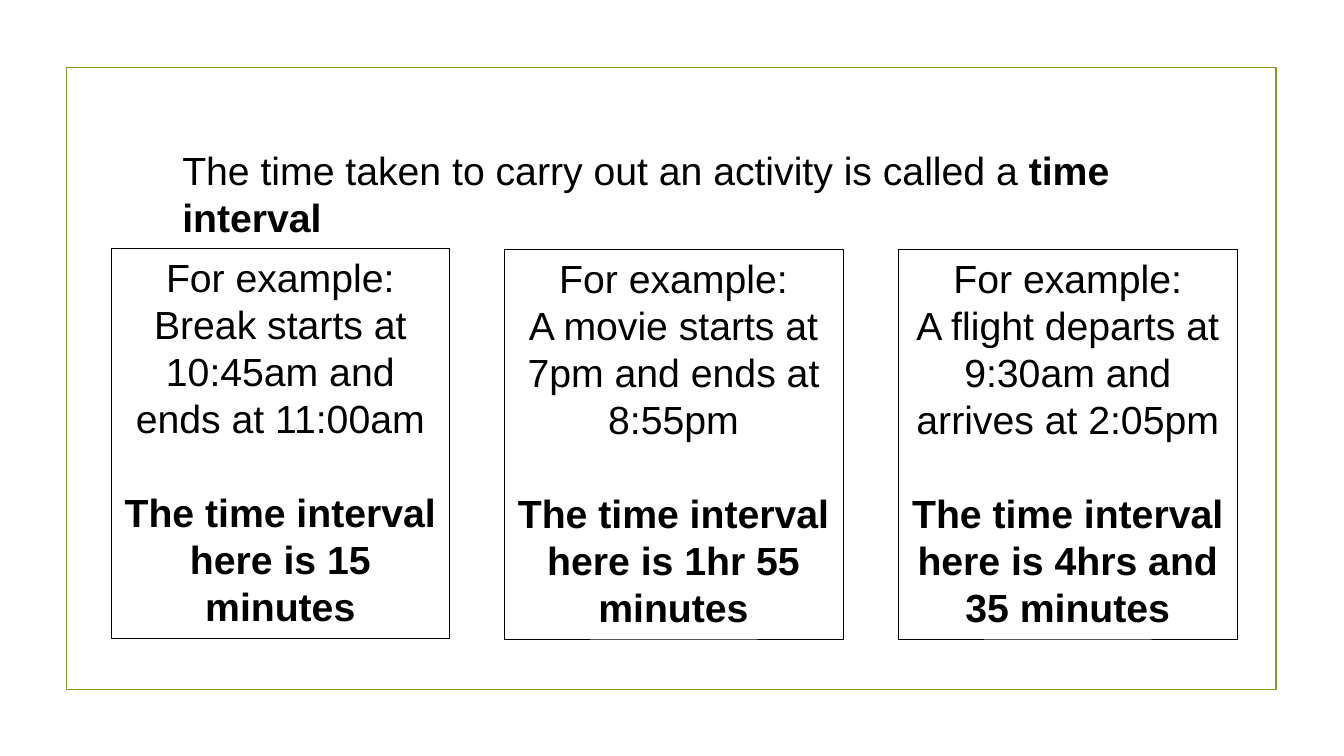
from dataclasses import dataclass

from pptx import Presentation
from pptx.dml.color import RGBColor
from pptx.enum.shapes import MSO_SHAPE as Shape
from pptx.enum.text import MSO_AUTO_SIZE as Fit, PP_ALIGN as Align
from pptx.util import Inches, Pt

BLACK = "000000"
GREEN = "83992A"
FONT = {"name": "Arial", "size": Pt(28)}
LINE_GAP = Pt(33.6)


@dataclass
class Card:
    left: float
    top: float
    event: str
    answer: str


CARDS = [
    Card(1.1, 2.46, "Break starts at 10:45am and ends at 11:00am",
         "The time interval here is 15 minutes"),
    Card(5, 2.47, "A movie starts at 7pm and ends at 8:55pm",
         "The time interval here is 1hr 55 minutes"),
    Card(8.91, 2.47, "A flight departs at 9:30am and arrives at 2:05pm",
         "The time interval here is 4hrs and 35 minutes"),
]


def color(code: str) -> RGBColor:
    return RGBColor.from_string(code)


def outline(shape, code: str, width: float) -> None:
    shape.line.color.rgb = color(code)
    shape.line.width = Pt(width)


def add_run(para, text: str, bold: bool = False) -> None:
    run = para.add_run()
    run.text = text
    for key, value in (FONT | {"bold": bold}).items():
        setattr(run.font, key, value)
    run.font.color.rgb = color(BLACK)


def add_box(slide, left: float, top: float, width: float, height: float):
    box = slide.shapes.add_textbox(*map(Inches, (left, top, width, height)))
    box.text_frame.word_wrap = True
    box.text_frame.auto_size = Fit.SHAPE_TO_FIT_TEXT
    return box


def add_frame(slide) -> None:
    frame = slide.shapes.add_shape(
        Shape.RECTANGLE, *map(Inches, (0.66, 0.67, 12, 6.17)))
    frame.shadow.inherit = False
    frame.fill.background()
    outline(frame, GREEN, 1.25)


def add_intro(slide) -> None:
    para = add_box(slide, 1.71, 1.4, 10.66, 0.57).text_frame.paragraphs[0]
    add_run(para, "The time taken to carry out an activity is called a ")
    add_run(para, "time interval", bold=True)


def add_card(slide, card: Card) -> None:
    box = add_box(slide, card.left, card.top, 3.36, 3.87)
    outline(box, BLACK, 0.25)
    frame = box.text_frame
    head = frame.paragraphs[0]
    event, answer = frame.add_paragraph(), frame.add_paragraph()
    answer.space_before = LINE_GAP
    for para in frame.paragraphs:
        para.alignment = Align.CENTER
    add_run(head, "For example:")
    add_run(event, card.event)
    add_run(answer, card.answer, bold=True)


def main() -> None:
    deck = Presentation()
    deck.slide_width, deck.slide_height = Inches(13.33), Inches(7.5)
    slide = deck.slides.add_slide(deck.slide_layouts[6])
    add_frame(slide)
    add_intro(slide)
    for card in CARDS:
        add_card(slide, card)
    deck.save("out.pptx")


if __name__ == "__main__":
    main()
